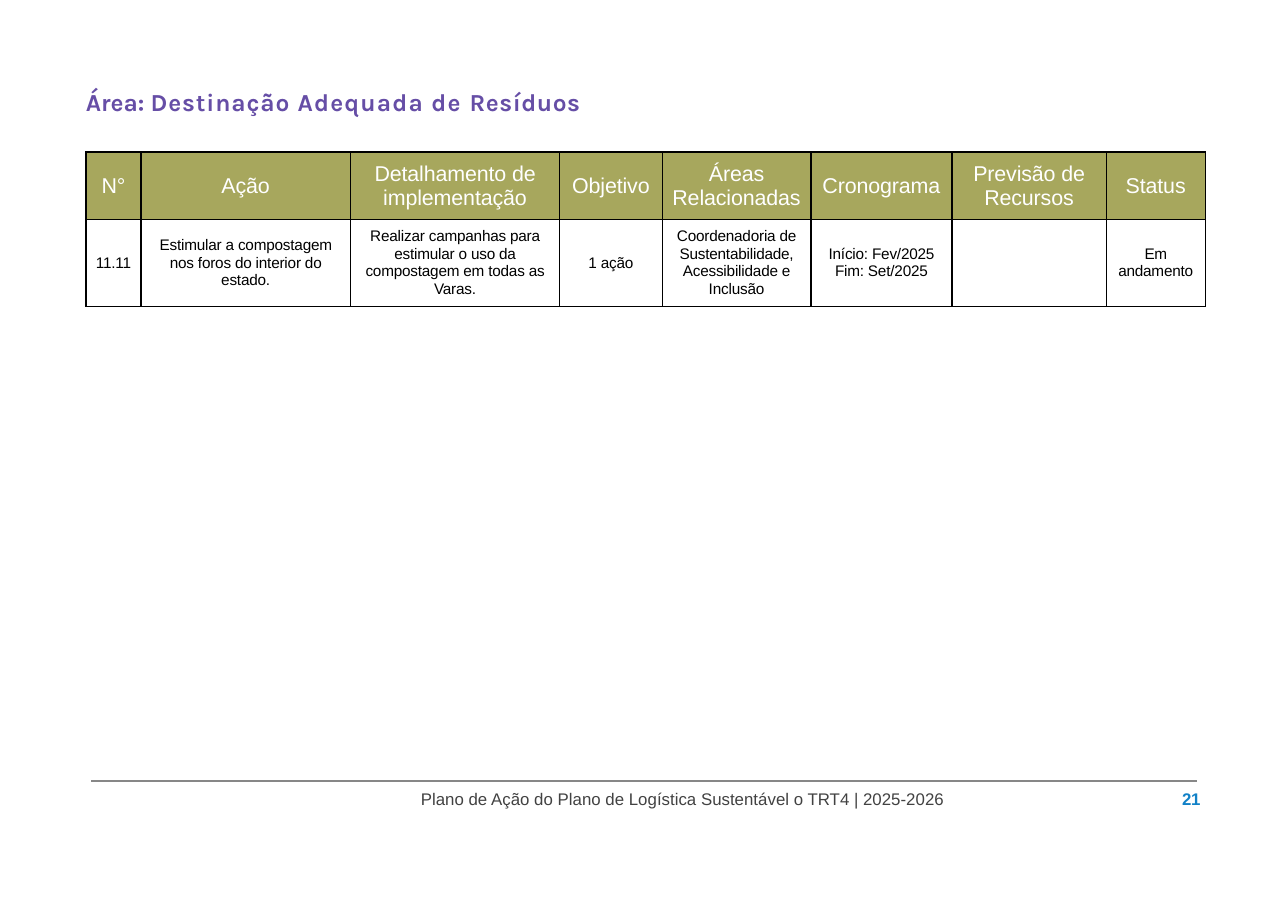
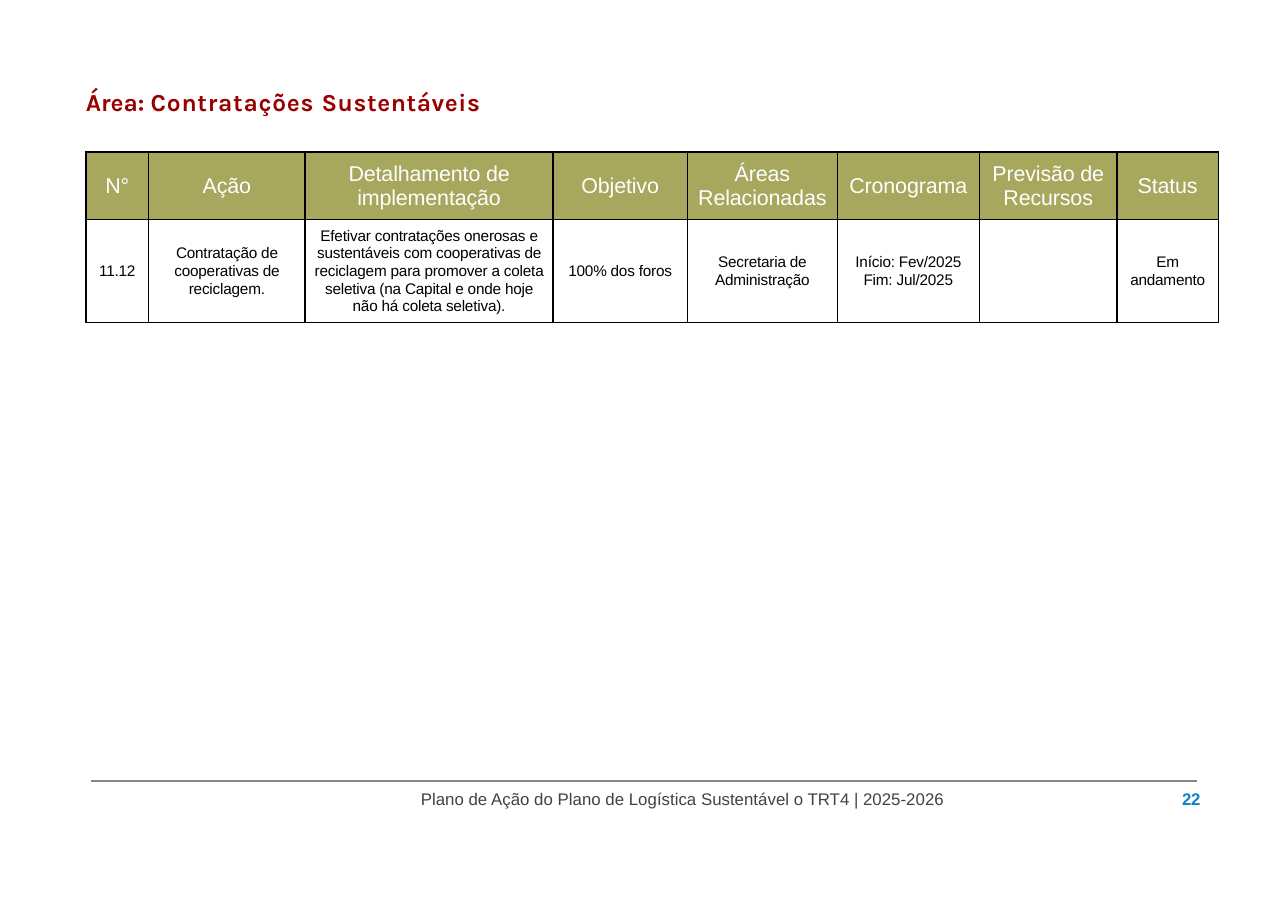
from lxml import etree
from pptx import Presentation
from pptx.dml.color import RGBColor
from pptx.enum.shapes import MSO_CONNECTOR
from pptx.enum.text import MSO_ANCHOR, PP_ALIGN
from pptx.oxml.ns import qn
from pptx.util import Inches, Pt

CENTER, LEFT = PP_ALIGN.CENTER, PP_ALIGN.LEFT
MIDDLE = MSO_ANCHOR.MIDDLE
STRAIGHT = MSO_CONNECTOR.STRAIGHT

SLIDE_W, SLIDE_H = 11.69, 8.28
OLIVE, WHITE, BLACK = "A7A75D", "FFFFFF", "000000"
RULE_GREY, FOOTER_GREY, PAGE_BLUE = "878787", "424242", "1181C7"
CELL_MARGIN = 0.06
HEADER_HEIGHT = 0.61
FOOTER = "Plano de Ação do Plano de Logística Sustentável o TRT4 | 2025-2026"
HEADERS = ["N°", "Ação", "Detalhamento de implementação", "Objetivo",
           "Áreas Relacionadas", "Cronograma", "Previsão de Recursos", "Status"]

# Title runs pair a text with its letter spacing in points
AREAS = [
    dict(title=[("Área: ", 0), ("Destinação ", 0.6), ("Adequada de ", 0.8),
                ("Resíduos", 0.4)],
         color="664EA6", page="21", row_height=0.79,
         widths=[0.5, 1.9, 1.9, 0.93, 1.35, 1.28, 1.4, 0.9],
         action=["11.11",
                 "Estimular a compostagem nos foros do interior do estado.",
                 "Realizar campanhas para estimular o uso da compostagem "
                 "em todas as Varas.",
                 "1 ação",
                 "Coordenadoria de Sustentabilidade, Acessibilidade e Inclusão",
                 "Início: Fev/2025 Fim: Set/2025", "", "Em andamento"]),
    dict(title=[("Área: ", 0), ("Contratações ", 0.5), ("Sustentáveis", 0.4)],
         color="990000", page="22", row_height=0.94,
         widths=[0.57, 1.42, 2.25, 1.22, 1.36, 1.29, 1.25, 0.92],
         action=["11.12",
                 "Contratação de cooperativas de reciclagem.",
                 "Efetivar contratações onerosas e sustentáveis com cooperativas "
                 "de reciclagem para promover a coleta seletiva (na Capital e "
                 "onde hoje não há coleta seletiva).",
                 "100% dos foros",
                 "Secretaria de Administração",
                 "Início: Fev/2025 Fim: Jul/2025", "", "Em andamento"]),
]


def rgb(color):
    return RGBColor.from_string(color)


def write(tf, runs, size, color, font="Arial", bold=False, align=LEFT, leading=None):
    """Fill a text frame with one paragraph of (text, letter spacing) runs."""
    tf.word_wrap = True
    p = tf.paragraphs[0]
    p.alignment = align
    if leading:
        p.line_spacing = Pt(leading)
    for text, spacing in runs:
        r = p.add_run()
        r.text = text
        r.font.name, r.font.size, r.font.bold = font, Pt(size), bold
        r.font.color.rgb = rgb(color)
        if spacing:
            r._r.get_or_add_rPr().set("spc", str(round(spacing * 100)))


def add_text(s, box, runs, **fmt):
    tf = s.shapes.add_textbox(*map(Inches, box)).text_frame
    tf.margin_left = Inches(0.01)
    tf.margin_top = tf.margin_right = tf.margin_bottom = 0
    write(tf, runs, **fmt)


def add_borders(cell, color=BLACK, width=1):
    tcPr = cell._tc.get_or_add_tcPr()
    for side in ("lnL", "lnR", "lnT", "lnB"):
        ln = etree.SubElement(tcPr, qn(f"a:{side}"), w=str(Pt(width)))
        fill = etree.SubElement(ln, qn("a:solidFill"))
        etree.SubElement(fill, qn("a:srgbClr"), val=color)


def add_action_table(s, left, top, widths, row_height, action):
    heights = [HEADER_HEIGHT, row_height]
    box = (left, top, sum(widths), sum(heights))
    table = s.shapes.add_table(2, len(widths), *map(Inches, box)).table
    table.first_row = table.horz_banding = False
    for column, width in zip(table.columns, widths):
        column.width = Inches(width)
    styles = [(HEADERS, OLIVE, dict(size=14, color=WHITE, leading=16.1)),
              (action, WHITE, dict(size=10, color=BLACK, leading=11.5))]
    for row, height, (texts, fill, fmt) in zip(table.rows, heights, styles):
        row.height = Inches(height)
        for cell, text in zip(row.cells, texts):
            add_borders(cell)
            cell.fill.solid()
            cell.fill.fore_color.rgb = rgb(fill)
            cell.vertical_anchor = MIDDLE
            cell.margin_left = cell.margin_right = Inches(CELL_MARGIN)
            cell.margin_top = cell.margin_bottom = 0
            if text:
                write(cell.text_frame, [(text, -0.1)], align=CENTER, **fmt)


def add_footer(s, left, top, width, page):
    rule = s.shapes.add_connector(
        STRAIGHT, *map(Inches, (left, top, left + width, top)))
    rule.line.color.rgb = rgb(RULE_GREY)
    rule.line.width = Pt(1)
    etree.SubElement(rule._element.spPr, qn("a:effectLst"))
    text_top = top + 0.07
    add_text(s, (left + 2.98, text_top, 4.86, 0.3), [(FOOTER, 0)],
             size=11, color=FOOTER_GREY, leading=13.2)
    add_text(s, (left + width - 0.14, text_top, 0.24, 0.2), [(page, -0.2)],
             size=11, color=PAGE_BLUE, bold=True, leading=13.2)


def add_area_slide(prs, area):
    s = prs.slides.add_slide(prs.slide_layouts[6])
    # Title
    add_text(s, (0.77, 0.79, 6, 0.29), area["title"],
             size=16, color=area["color"], font="Karla", bold=True)
    # Actions
    add_action_table(s, 0.78, 1.38, area["widths"], area["row_height"],
                     area["action"])
    # Footer
    add_footer(s, 0.83, 7.09, 10.03, area["page"])


def main():
    prs = Presentation()
    prs.slide_width, prs.slide_height = Inches(SLIDE_W), Inches(SLIDE_H)
    for area in AREAS:
        add_area_slide(prs, area)
    prs.save("out.pptx")


if __name__ == "__main__":
    main()
